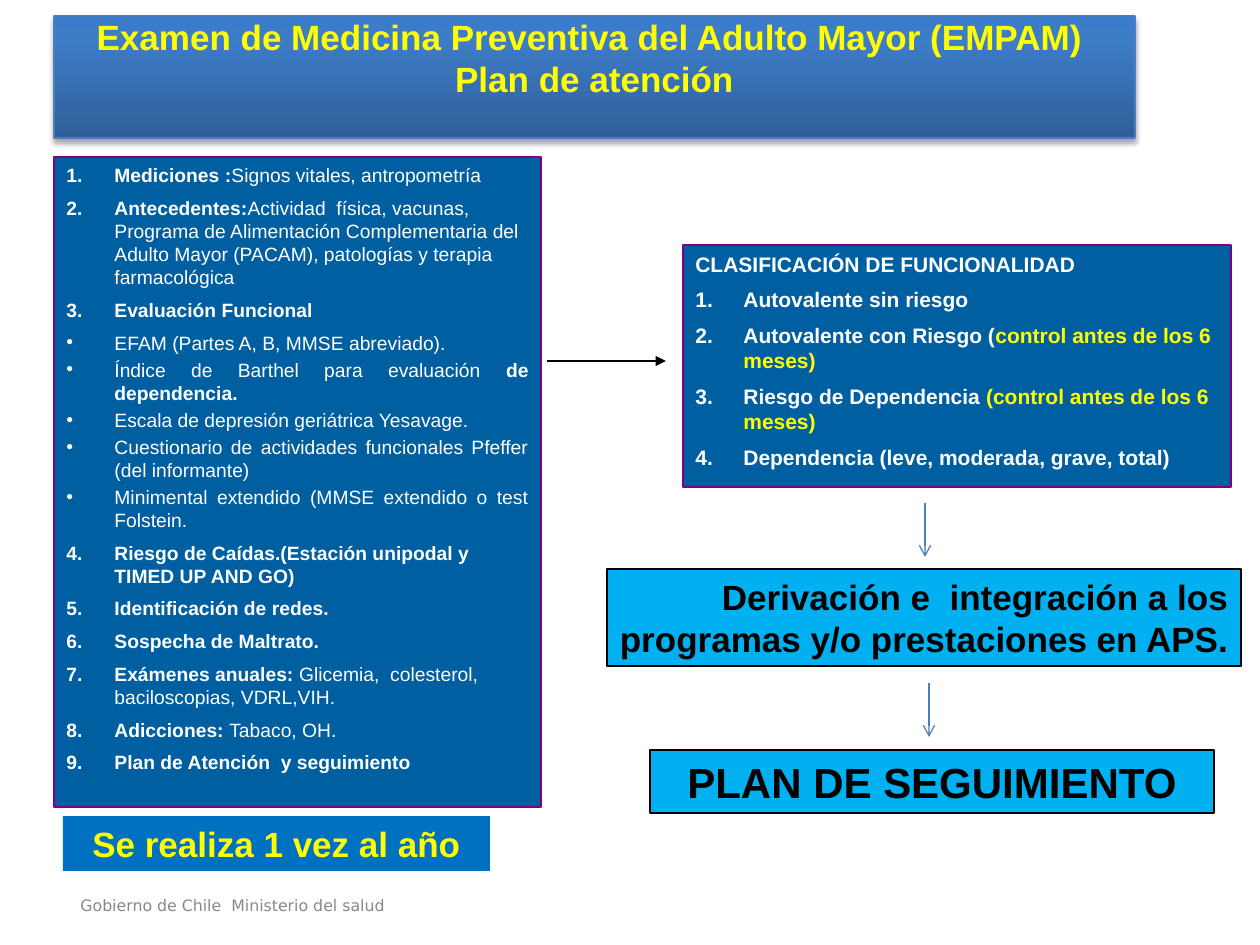
import copy

import pptx
import pptx.dml.color
import pptx.enum.shapes
import pptx.enum.text
import pptx.oxml.ns
import pptx.util
from lxml import etree

EMU_PER_PX = 914400 / 126
COLORS = {
    "white": "FFFFFF", "black": "000000", "yellow": "FFFF00", "grey": "898989",
    "panel": "005FA1", "purple": "800080", "cyan": "00B0F0", "note": "0070C0",
    "edge": "4B7EBC", "title dark": "2F5F99", "title mid": "3D7CC7",
    "title light": "3A7CCB",
}
ALIGN = pptx.enum.text.PP_ALIGN
ANCHOR = pptx.enum.text.MSO_ANCHOR
HANGING = 48


def px(value):
    return pptx.util.Emu(round(value * EMU_PER_PX))


def rgb(name):
    return pptx.dml.color.RGBColor.from_string(COLORS[name])


def add_node(parent, tag, **attributes):
    node = etree.SubElement(parent, pptx.oxml.ns.qn(tag))
    for name, value in attributes.items():
        node.set(name, str(value))
    return node


class SlideBuilder:
    def __init__(self, slide, font="Arial"):
        self.slide = slide
        self.font = font

    def box(self, left, top, width, height, fill, line=None):
        shape = self.slide.shapes.add_shape(
            pptx.enum.shapes.MSO_SHAPE.RECTANGLE,
            px(left), px(top), px(width), px(height))
        shape.shadow.inherit = False
        shape.fill.solid()
        shape.fill.fore_color.rgb = rgb(fill)
        if line:
            shape.line.color.rgb = rgb(line)
            shape.line.width = pptx.util.Pt(0.75)
        else:
            shape.line.fill.background()
        return shape

    def gradient(self, shape, stops, angle):
        shape.fill.gradient()
        shape.fill.gradient_angle = angle
        stop_list = shape._element.spPr.find(".//" + pptx.oxml.ns.qn("a:gsLst"))
        stop_list.append(copy.deepcopy(stop_list[-1]))
        for stop, (position, color) in zip(shape.fill.gradient_stops, stops):
            stop.position = position
            stop.color.rgb = rgb(color)

    def shadow(self, shape, color, opacity, blur, distance, angle):
        effects = shape._element.spPr.find(pptx.oxml.ns.qn("a:effectLst"))
        outer = add_node(effects, "a:outerShdw", blurRad=pptx.util.Pt(blur),
                         dist=pptx.util.Pt(distance), dir=angle * 60000,
                         algn="ctr", rotWithShape=0)
        shade = add_node(outer, "a:srgbClr", val=COLORS[color])
        add_node(shade, "a:alpha", val=opacity * 1000)

    def text_box(self, left, top, width, height):
        return self.slide.shapes.add_textbox(px(left), px(top), px(width), px(height))

    def text(self, shape, paragraphs, size, color, before=0, font=None, **frame_format):
        """Each paragraph is (runs, options); each run is (text, bold, color)."""
        frame = shape.text_frame
        values = {"word_wrap": True, "vertical_anchor": ANCHOR.TOP, **frame_format}
        for name, value in values.items():
            setattr(frame, name, value)
        for index, (runs, options) in enumerate(paragraphs):
            paragraph = frame.add_paragraph() if index else frame.paragraphs[0]
            paragraph.alignment = options.get("align", ALIGN.LEFT)
            paragraph.space_before = pptx.util.Pt(options.get("before", before))
            if "bullet" in options:
                self.bullet(paragraph, options["bullet"])
            for content, bold, run_color in runs:
                run = paragraph.add_run()
                run.text = content
                run.font.color.rgb = rgb(run_color or color)
                style = {"name": font or self.font, "bold": bold,
                         "size": pptx.util.Pt(size)}
                for name, value in style.items():
                    setattr(run.font, name, value)

    def bullet(self, paragraph, mark):
        """A whole number starts a numbered list; text is the bullet itself."""
        properties = paragraph._p.get_or_add_pPr()
        properties.set("marL", str(px(HANGING)))
        properties.set("indent", str(-px(HANGING)))
        if isinstance(mark, int):
            add_node(properties, "a:buFont", typeface="+mj-lt")
            add_node(properties, "a:buAutoNum", type="arabicPeriod", startAt=mark)
        else:
            add_node(properties, "a:buFont", typeface=self.font)
            add_node(properties, "a:buChar", char=mark)

    def arrow(self, start, end, color, head):
        connector = self.slide.shapes.add_connector(
            pptx.enum.shapes.MSO_CONNECTOR.STRAIGHT, *map(px, start + end))
        connector.line.color.rgb = rgb(color)
        connector.line.width = pptx.util.Pt(0.75)
        add_node(connector.line._get_or_add_ln(), "a:tailEnd", type=head)
        add_node(connector._element.spPr, "a:effectLst")


def bold(content, color=None):
    return content, True, color


def plain(content):
    return content, False, None


def item(mark, *runs, **options):
    return runs, {"bullet": mark, **options}


def main():
    presentation = pptx.Presentation()
    presentation.slide_width = px(1260)
    presentation.slide_height = px(945)
    builder = SlideBuilder(presentation.slides.add_slide(presentation.slide_layouts[6]))

    # Examination steps
    steps = builder.box(54, 157, 487, 650, "panel", "purple")
    tight = {"align": ALIGN.JUSTIFY, "before": 2.2}
    builder.text(steps, [
        item(1, bold("Mediciones :"), plain("Signos vitales, antropometría")),
        item(1, bold("Antecedentes:"),
             plain("Actividad  física, vacunas, Programa de Alimentación Complementaria "
                   "del Adulto Mayor (PACAM), patologías y terapia farmacológica")),
        item(1, bold("Evaluación Funcional")),
        item("•", plain("EFAM (Partes A, B, MMSE abreviado).")),
        item("•", plain("Índice de Barthel para evaluación "),
             bold("de dependencia."), **tight),
        item("•", plain("Escala de depresión geriátrica Yesavage."), **tight),
        item("•", plain("Cuestionario de actividades funcionales Pfeffer "
                        "(del informante)"), **tight),
        item("•", plain("Minimental extendido (MMSE extendido o test Folstein."), **tight),
        item(4, bold("Riesgo de Caídas.(Estación unipodal y TIMED UP AND GO)")),
        item(4, bold("Identificación de redes.")),
        item(4, bold("Sospecha de Maltrato.")),
        item(4, bold("Exámenes anuales: "),
             plain("Glicemia,  colesterol, baciloscopias, VDRL,VIH.")),
        item(4, bold("Adicciones: "), plain("Tabaco, OH.")),
        item(4, bold("Plan de Atención  y seguimiento")),
    ], 11, "white", before=5.5)

    # Functional classes
    classes = builder.box(683, 245, 548, 242, "panel", "purple")
    control = "control antes de los 6 meses)"
    builder.text(classes, [
        ([bold("CLASIFICACIÓN DE FUNCIONALIDAD")], {}),
        item(1, bold("Autovalente sin riesgo")),
        item(1, bold("Autovalente con Riesgo ("), bold(control, "yellow")),
        item(1, bold("Riesgo de Dependencia "), bold("(" + control, "yellow")),
        item(1, bold("Dependencia (leve, moderada, grave, total)")),
    ], 12, "white", before=6)

    # Referral, follow-up, yearly note
    for place, fill, line, content, size, color, align in (
            ((607, 569, 634, 97), "cyan", "black",
             "Derivación e  integración a los programas y/o prestaciones en APS.",
             20, "black", ALIGN.RIGHT),
            ((650, 750, 564, 63), "cyan", "black", "PLAN DE SEGUIMIENTO",
             24, "black", ALIGN.CENTER),
            ((63, 816, 427, 55), "note", None, "Se realiza 1 vez al año",
             20, "yellow", ALIGN.CENTER)):
        builder.text(builder.box(*place, fill, line),
                     [([bold(content)], {"align": align})], size, color)

    # Flow arrows
    builder.arrow((547, 361), (666, 361), "black", "triangle")
    builder.arrow((925, 503), (925, 557), "edge", "arrow")
    builder.arrow((929, 683), (929, 737), "edge", "arrow")

    # Title
    title = builder.box(54, 16, 1081, 122, "title mid", "edge")
    builder.gradient(title, ((0, "title dark"), (0.8, "title mid"), (1, "title light")), 90)
    builder.shadow(title, "black", 35, 3.1, 1.8, 90)
    builder.text(title, [
        ([bold(line)], {"align": ALIGN.CENTER}) for line in (
            "Examen de Medicina Preventiva del Adulto Mayor (EMPAM) ", "Plan de atención")
    ], 20, "yellow", vertical_anchor=ANCHOR.MIDDLE, margin_top=0, margin_bottom=px(40))

    # Footer
    builder.text(builder.text_box(68, 890, 399, 34),
                 [([plain("Gobierno de Chile  Ministerio del salud")], {})],
                 9, "grey", font="DejaVu Sans")

    presentation.save("out.pptx")


if __name__ == "__main__":
    main()
